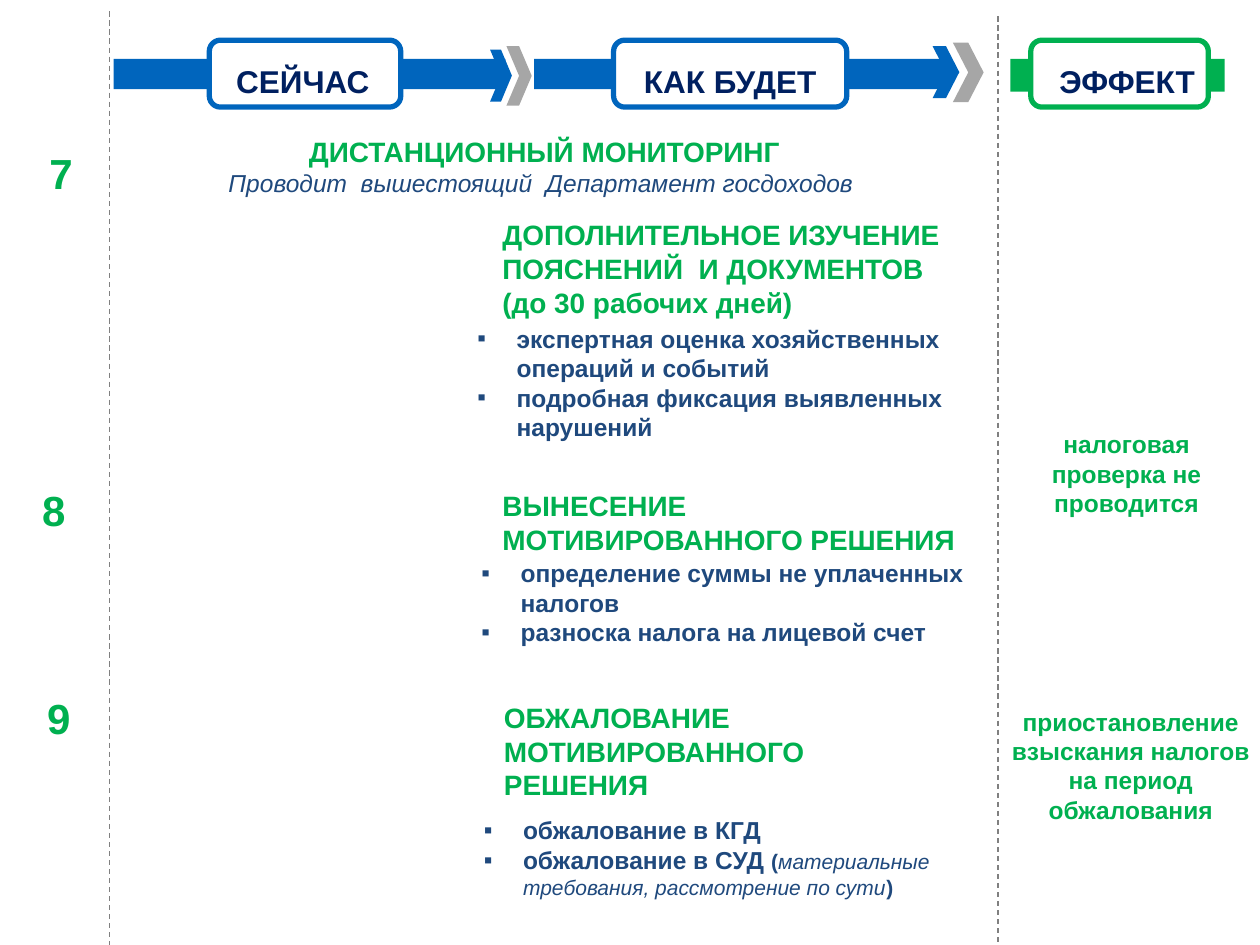
"""Build the slide on remote monitoring: now, what will be, effect."""
import lxml.etree
import pptx
import pptx.dml.color
import pptx.enum.dml
import pptx.enum.shapes
import pptx.enum.text
import pptx.oxml.ns
import pptx.util

Cm = pptx.util.Cm
Pt = pptx.util.Pt
KIND = pptx.enum.shapes.MSO_SHAPE
ALIGN = pptx.enum.text.PP_ALIGN
GREEN, BLUE, NAVY = "00B050", "0065BD", "002060"
INK, GREY, WHITE = "1F497D", "A6A6A6", "FFFFFF"


def tint(code):
    """Turn a hex string into a colour."""
    return pptx.dml.color.RGBColor.from_string(code)


def node(root, tag, **attrs):
    """Append a drawing element to a root."""
    return lxml.etree.SubElement(root, pptx.oxml.ns.qn(tag), attrs)


def put(shape, box):
    """Move a shape to a box in centimetres."""
    shape.left, shape.top, shape.width, shape.height = map(Cm, box)


def part(text, size, color, bold=True, slant=False):
    """Describe one run of text."""
    return text, size, color, bold, slant


def write(shape, lines, align=ALIGN.LEFT, space=1.0, left=0, mark=None):
    """Fill a shape with lines, each a list of runs."""
    frame = shape.text_frame
    frame.word_wrap = True
    frame.auto_size = pptx.enum.text.MSO_AUTO_SIZE.NONE
    frame.vertical_anchor = pptx.enum.text.MSO_ANCHOR.TOP
    for i, line in enumerate(lines):
        para = frame.paragraphs[0] if i == 0 else frame.add_paragraph()
        para.alignment, para.line_spacing = align, space
        para.space_before = para.space_after = Pt(0)
        props = para._p.get_or_add_pPr()
        props.set("marL", str(Cm(left)))
        props.set("indent", str(-Cm(left) if mark else 0))
        if mark:
            node(props, "a:buFont", typeface="Arial")
            node(props, "a:buChar", char=mark)
        else:
            node(props, "a:buNone")
        for text, size, color, bold, slant in line:
            run = para.add_run()
            run.text = text
            font = run.font
            font.name, font.size = "Arial", Pt(size)
            font.bold, font.italic = bold, slant
            font.color.rgb = tint(color)


def label(slide, box, lines, **style):
    """Add a text box."""
    write(slide.shapes.add_textbox(*map(Cm, box)), lines, **style)


def block(slide, kind, box, fill, edge=None):
    """Add a filled preset shape."""
    shape = slide.shapes.add_shape(kind, *map(Cm, box))
    shape.shadow.inherit = False
    shape.fill.solid()
    shape.fill.fore_color.rgb = tint(fill)
    if edge:
        shape.line.color.rgb = tint(edge)
        shape.line.width = Pt(3)
    else:
        shape.line.fill.background()


def rule(slide, x, top, end):
    """Add a dashed upright line."""
    line = slide.shapes.add_connector(
        pptx.enum.shapes.MSO_CONNECTOR.STRAIGHT, Cm(x), Cm(top), Cm(x), Cm(end))
    line.line.color.rgb = tint("808080")
    line.line.width = Pt(0.75)
    line.line.dash_style = pptx.enum.dml.MSO_LINE.DASH
    node(line._element.spPr, "a:effectLst")


def banner(slide, box, card, name, color, left=0):
    """Draw a band with a named card; card and name are (x, width)."""
    x, y, wide, high = box
    block(slide, KIND.RECTANGLE, box, color)
    block(slide, KIND.ROUNDED_RECTANGLE,
          (x + card[0], y - 0.38, card[1], 1.35), WHITE, color)
    text, dx, span = name
    label(slide, (x + dx, y - 0.45, span, 1.42), [[part(text, 18, NAVY)]],
          align=ALIGN.CENTER, space=1.5, left=left)


def arrow(slide, box, wide):
    """Draw a blue and a grey chevron in a box."""
    x, y, span, high = box
    block(slide, KIND.CHEVRON, (x, y + 0.07, wide[0], high - 0.15), BLUE)
    block(slide, KIND.CHEVRON, (x + span - wide[1], y, wide[1], high), GREY)


def intro(slide, box):
    """Place the title with its remark."""
    title = slide.shapes.title
    put(title, box)
    write(title, [
        [part("ДИСТАНЦИОННЫЙ МОНИТОРИНГ", 16, GREEN)],
        [part("Проводит  вышестоящий  Департамент госдоходов ",
              14, INK, False, True)],
    ], align=ALIGN.CENTER)


def stage(slide, box, heads, body, list_box, items):
    """Place a heading and, relative to it, a bulleted list."""
    x, y = box[:2]
    label(slide, box, [[part(text, 16, GREEN)] for text in heads])
    dx, dy, wide, high = list_box
    put(body, (x + dx, y + dy, wide, high))
    write(body, items, left=0.79, mark="▪")


def point(text):
    """Make a list item of one run."""
    return [part(text, 14, INK)]


def main():
    """Build and save the deck."""
    deck = pptx.Presentation()
    deck.slide_width, deck.slide_height = Cm(25.4), Cm(19.05)
    slide = deck.slides.add_slide(deck.slide_layouts[4])
    holds = {p.placeholder_format.idx: p for p in slide.placeholders}
    spare = holds[3].element
    spare.getparent().remove(spare)

    rule(slide, 2.21, 0.23, 19.05)
    rule(slide, 20.12, 0.33, 19.05)
    banner(slide, (10.77, 1.19, 8.33, 0.61), (1.6, 4.7),
           ("КАК БУДЕТ", 0.61, 6.2), BLUE, 0.48)
    banner(slide, (2.29, 1.19, 7.9, 0.61), (1.93, 3.86),
           ("СЕЙЧАС", 1.57, 4.01), BLUE, 0.48)
    banner(slide, (20.37, 1.19, 4.32, 0.66), (0.41, 3.58),
           ("ЭФФЕКТ", 0.36, 3.99), GREEN)
    arrow(slide, (9.88, 0.93, 0.84, 1.2), (0.44, 0.51))
    arrow(slide, (18.8, 0.86, 1.03, 1.2), (0.54, 0.62))

    intro(slide, (1.68, 2.59, 18.59, 1.55))
    stage(slide, (9.88, 4.27, 10.77, 2.31),
          ["ДОПОЛНИТЕЛЬНОЕ ИЗУЧЕНИЕ ПОЯСНЕНИЙ  И ДОКУМЕНТОВ",
           "(до 30 рабочих дней)"],
          holds[1], (-0.51, 2.13, 10.85, 2.64),
          [point("экспертная оценка хозяйственных операций и событий"),
           point("подробная фиксация выявленных нарушений")])
    stage(slide, (9.88, 9.73, 10.26, 1.63),
          ["ВЫНЕСЕНИЕ МОТИВИРОВАННОГО РЕШЕНИЯ"],
          holds[2], (-0.43, 1.4, 10.82, 2.06),
          [point("определение суммы не уплаченных налогов"),
           point("разноска налога на лицевой счет")])
    stage(slide, (9.91, 14, 9.02, 2.31),
          ["ОБЖАЛОВАНИЕ МОТИВИРОВАННОГО РЕШЕНИЯ"],
          holds[4], (-0.41, 2.31, 10.34, 2.41),
          [point("обжалование в КГД"),
           [part("обжалование в СУД ", 14, INK), part("(", 12, INK),
            part("материальные требования, рассмотрение по сути",
                 12, INK, False, True), part(")", 12, INK)]])

    for text, x, y, wide in (("7", 0.71, 2.84, 1.04), ("8", 0.3, 9.65, 1.57),
                             ("9", 0.69, 13.84, 0.99)):
        label(slide, (x, y, wide, 1.27), [[part(text, 24, GREEN)]],
              align=ALIGN.CENTER)
    for box, lines in (
            ((20.4, 8.53, 4.62, 2.06), ["налоговая проверка не проводится"]),
            ((19.99, 14.12, 5.61, 2.64),
             ["приостановление", "взыскания налогов на период обжалования"])):
        label(slide, box, [[part(text, 14, GREEN)] for text in lines],
              align=ALIGN.CENTER)
    deck.save("out.pptx")


if __name__ == "__main__":
    main()
